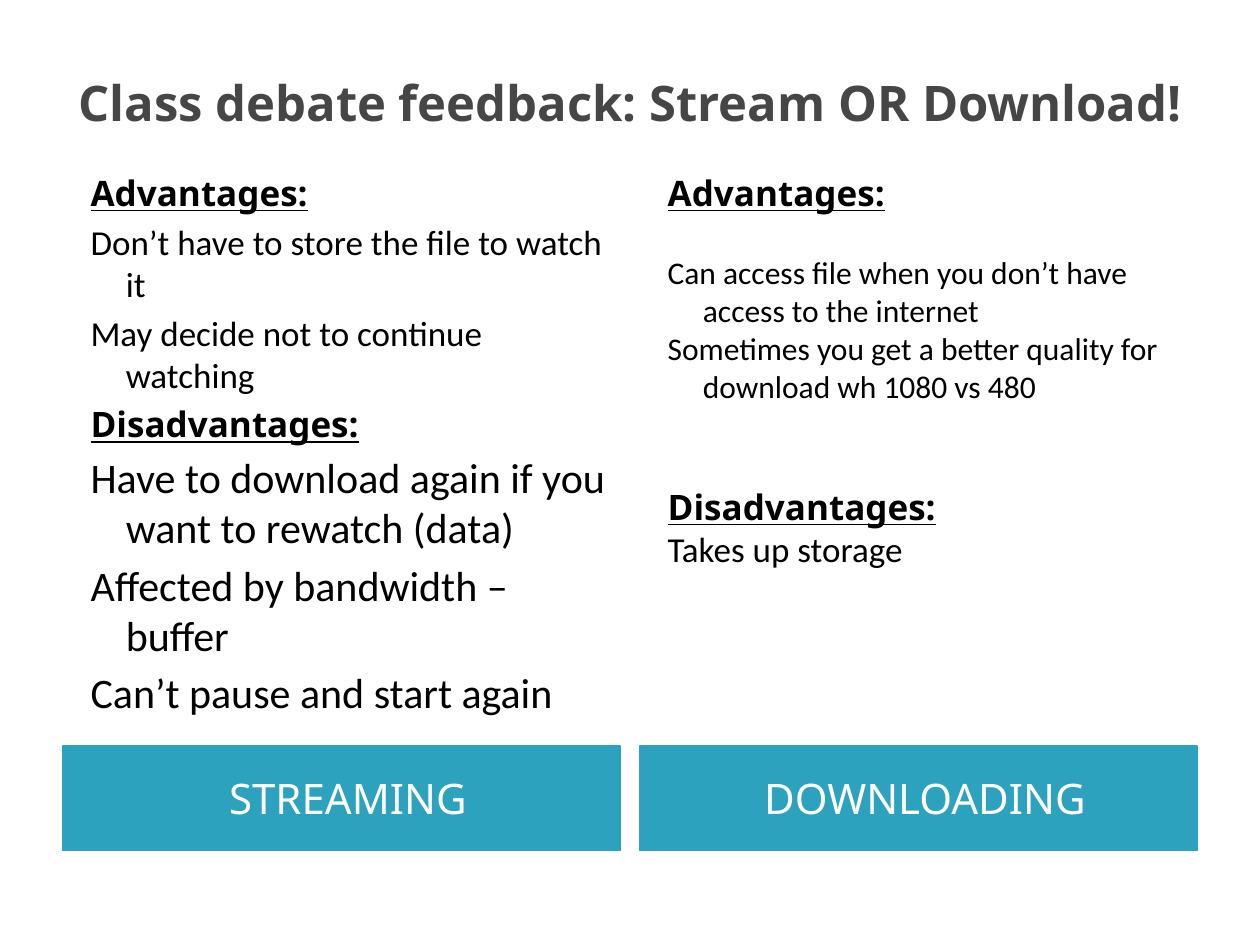
from pptx import Presentation
from pptx.dml.color import RGBColor
from pptx.enum.shapes import MSO_SHAPE
from pptx.enum.text import MSO_ANCHOR, PP_ALIGN
from pptx.util import Inches, Pt

RECTANGLE = MSO_SHAPE.RECTANGLE
TOP, MIDDLE = MSO_ANCHOR.TOP, MSO_ANCHOR.MIDDLE
CENTER = PP_ALIGN.CENTER

THEME = {
    "heading_font": "Noto Sans",
    "body_font": "Calibri",
    "title": RGBColor(0x46, 0x46, 0x46),
    "text": RGBColor(0, 0, 0),
    "banner": RGBColor(0x2D, 0xA2, 0xBF),
    "banner_text": RGBColor(0xFF, 0xFF, 0xFF),
    "title_size": 28,
    "banner_size": 24,
    "heading_size": 20,
}

TITLE = "Class debate feedback: Stream OR Download!"
# Each section: heading, point size, space before the heading, before the
# first point and before later points, then the points themselves.
COLUMNS = [
    ("STREAMING", [
        ("Advantages:", 20, (0, 4, 4), [
            "Don’t have to store the file to watch it",
            "May decide not to continue watching",
        ]),
        ("Disadvantages:", 24, (4, 4, 4), [
            "Have to download again if you want to rewatch (data)",
            "Affected by bandwidth – buffer",
            "Can’t pause and start again",
        ]),
    ]),
    ("DOWNLOADING", [
        ("Advantages:", 18, (0, 23, 0), [
            "Can access file when you don’t have access to the internet",
            "Sometimes you get a better quality for download wh 1080 vs 480",
        ]),
        ("Disadvantages:", 20, (46, 0, 0), ["Takes up storage"]),
    ]),
]

MARGIN, COLUMN_WIDTH, COLUMN_STEP = 0.5, 4.42, 4.58
TITLE_TOP, TITLE_HEIGHT = 0.3, 1.01
BODY_TOP, BODY_HEIGHT = 1.31, 4.58
BANNER_TOP, BANNER_HEIGHT = 5.92, 0.83


def set_up_frame(shape, anchor, left_inset=0.1):
    frame = shape.text_frame
    frame.word_wrap = True
    frame.vertical_anchor = anchor
    frame.margin_left, frame.margin_right = Inches(left_inset), Inches(0.1)
    frame.margin_top = frame.margin_bottom = Inches(0.05)
    return frame


def add_run(paragraph, text, size, font_name, color, bold=False, underline=False):
    run = paragraph.add_run()
    run.text = text
    font = run.font
    font.name, font.size = font_name, Pt(size)
    font.bold, font.underline = bold, underline
    font.color.rgb = color


def add_title(slide):
    box = slide.shapes.add_textbox(Inches(MARGIN), Inches(TITLE_TOP),
                                   Inches(10 - 2 * MARGIN), Inches(TITLE_HEIGHT))
    paragraph = set_up_frame(box, MIDDLE).paragraphs[0]
    paragraph.alignment = CENTER
    add_run(paragraph, TITLE, THEME["title_size"], THEME["heading_font"],
            THEME["title"], bold=True)


def add_banner(slide, left, label):
    banner = slide.shapes.add_shape(RECTANGLE, Inches(left), Inches(BANNER_TOP),
                                    Inches(COLUMN_WIDTH), Inches(BANNER_HEIGHT))
    banner.shadow.inherit = False
    banner.fill.solid()
    banner.fill.fore_color.rgb = THEME["banner"]
    banner.line.color.rgb = THEME["banner"]
    banner.line.width = Pt(0.75)
    paragraph = set_up_frame(banner, MIDDLE, left_inset=0.2).paragraphs[0]
    paragraph.alignment = CENTER
    add_run(paragraph, label, THEME["banner_size"], THEME["heading_font"],
            THEME["banner_text"])


def add_hanging_paragraph(frame, space_before):
    """Start a paragraph whose wrapped lines are indented."""
    first = frame.paragraphs[0]
    paragraph = frame.add_paragraph() if first.runs else first
    properties = paragraph._p.get_or_add_pPr()
    properties.set("marL", str(Inches(0.4)))
    properties.set("indent", str(Inches(-0.28)))
    paragraph.space_before = Pt(space_before)
    return paragraph


def add_arguments(slide, left, sections):
    box = slide.shapes.add_textbox(Inches(left), Inches(BODY_TOP),
                                   Inches(COLUMN_WIDTH), Inches(BODY_HEIGHT))
    frame = set_up_frame(box, TOP)
    for heading, size, (before_heading, before_first, before_next), points in sections:
        add_run(add_hanging_paragraph(frame, before_heading), heading,
                THEME["heading_size"], THEME["heading_font"], THEME["text"],
                bold=True, underline=True)
        for index, point in enumerate(points):
            gap = before_next if index else before_first
            add_run(add_hanging_paragraph(frame, gap), point, size,
                    THEME["body_font"], THEME["text"])


def main():
    presentation = Presentation()
    presentation.slide_width, presentation.slide_height = Inches(10), Inches(7.5)
    slide = presentation.slides.add_slide(presentation.slide_layouts[6])
    add_title(slide)
    for index, (label, sections) in enumerate(COLUMNS):
        left = MARGIN + index * COLUMN_STEP
        add_banner(slide, left, label)
        add_arguments(slide, left, sections)
    presentation.save("out.pptx")


if __name__ == "__main__":
    main()
